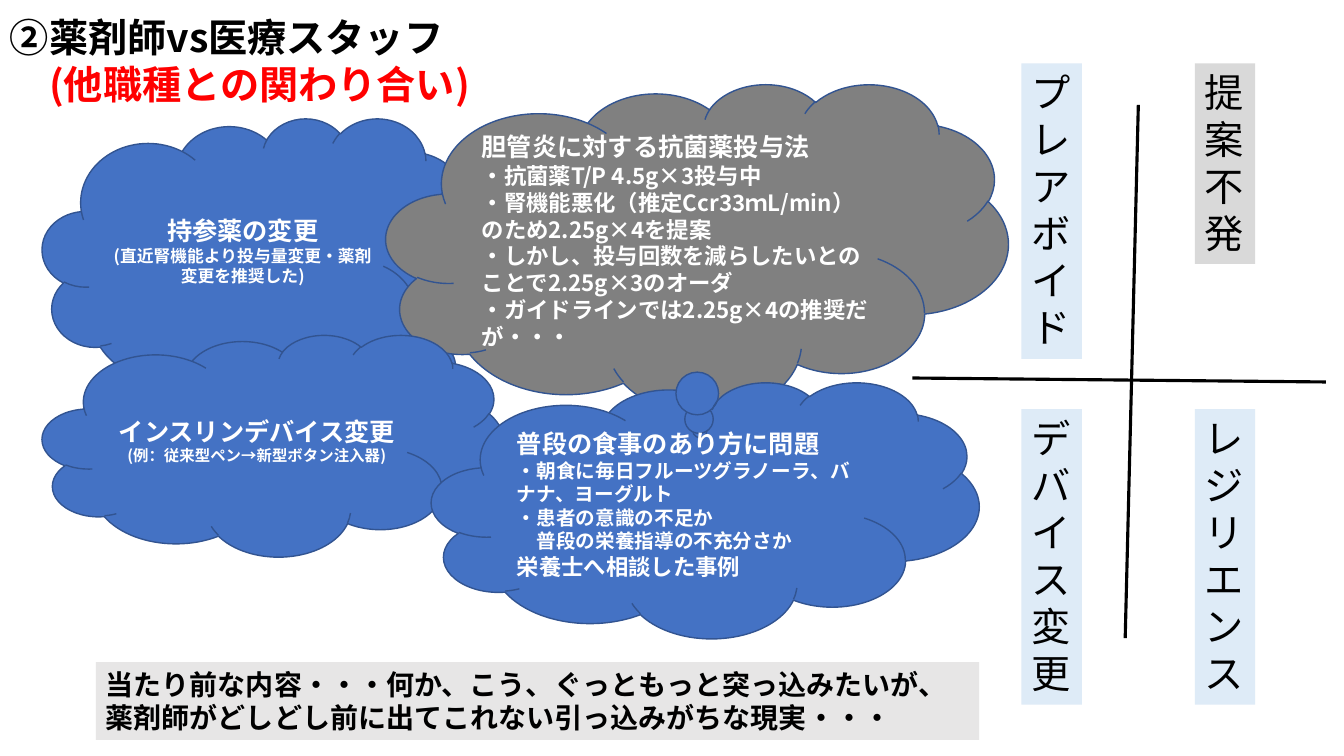
from dataclasses import dataclass

from lxml import etree
from pptx import Presentation
from pptx import util as u
from pptx.dml.color import RGBColor
from pptx.enum import shapes, text
from pptx.oxml import ns

WIDTH, HEIGHT = u.Inches(13.33), u.Inches(7.5)


@dataclass(frozen=True)
class Theme:
    """Colours, font and type sizes of the slide."""
    font: str = "Noto Sans CJK JP"
    black: str = "000000"
    white: str = "FFFFFF"
    red: str = "FF0000"
    blue: str = "4472C4"
    grey: str = "808080"
    outline: str = "325491"
    pale_blue: str = "DEEBF7"
    pale_grey: str = "D9D9D9"
    banner: str = "E7E6E6"
    title: int = 28
    summary: int = 20
    heading: int = 18
    large: int = 16
    medium: int = 14
    small: int = 12
    tiny: int = 11


THEME = Theme()


def across(share):
    """Turn a percentage of the slide width into a length."""
    return u.Emu(round(WIDTH * share / 100))


def down(share):
    """Turn a percentage of the slide height into a length."""
    return u.Emu(round(HEIGHT * share / 100))


def place(left, top, width, height):
    """Turn percentages of the slide into a position and size."""
    return across(left), down(top), across(width), down(height)


def apply(target, formats):
    """Set each format value on the target."""
    for name, value in formats.items():
        setattr(target, name, value)


def write(shape, lines, color, bold=True, align=text.PP_ALIGN.LEFT, **frame_formats):
    """Fill a shape with lines of (words, size, optional overrides)."""
    frame = shape.text_frame
    apply(frame, {"word_wrap": True, **frame_formats})
    for index, (words, size, *extra) in enumerate(lines):
        options = extra[0] if extra else {}
        paragraph = frame.paragraphs[0] if index == 0 else frame.add_paragraph()
        paragraph.alignment = align
        if options.get("indented"):
            properties = paragraph._p.get_or_add_pPr()
            apply_indent = {"marL": str(u.Pt(size)), "indent": "0"}
            properties.attrib.update(apply_indent)
        run = paragraph.add_run()
        run.text = words
        apply(run.font, {"size": u.Pt(size), "bold": bold, "name": THEME.font})
        run.font.color.rgb = RGBColor.from_string(options.get("color", color))
        east_asian = etree.SubElement(run.font._element, ns.qn("a:ea"))
        east_asian.set("typeface", THEME.font)


def add_filled(slide, kind, box, fill):
    """Add a flat preset shape without an outline."""
    shape = slide.shapes.add_shape(kind, *place(*box))
    shape.shadow.inherit = False
    shape.fill.solid()
    shape.fill.fore_color.rgb = RGBColor.from_string(fill)
    shape.line.fill.background()
    return shape


def add_cloud(slide, box, tail, fill, lines, align=text.PP_ALIGN.LEFT):
    """Add a cloud callout with its tail and words."""
    cloud = add_filled(slide, shapes.MSO_SHAPE.CLOUD_CALLOUT, box, fill)
    for index, offset in enumerate(tail):
        cloud.adjustments[index] = offset
    cloud.line.color.rgb = RGBColor.from_string(THEME.outline)
    cloud.line.width = u.Pt(1)
    write(cloud, lines, THEME.white, align=align,
          vertical_anchor=text.MSO_ANCHOR.MIDDLE)


def add_panel(slide, box, fill, words, size, bold):
    """Add a filled rectangle that grows with its text."""
    panel = add_filled(slide, shapes.MSO_SHAPE.RECTANGLE, box, fill)
    write(panel, [(words, size)], THEME.black, bold,
          vertical_anchor=text.MSO_ANCHOR.TOP,
          auto_size=text.MSO_AUTO_SIZE.SHAPE_TO_FIT_TEXT)


def add_label(slide, left, top, fill, words):
    """Add a one-character-wide label, as tall as its words."""
    box = (left, top, 4.5, 1.45 + 6.27 * len(words))
    add_panel(slide, box, fill, words, THEME.title, False)


def add_axis(slide, start, end):
    """Add a black line of the quadrant chart."""
    axis = slide.shapes.add_connector(
        shapes.MSO_CONNECTOR.STRAIGHT,
        across(start[0]), down(start[1]), across(end[0]), down(end[1]))
    axis.line.color.rgb = RGBColor.from_string(THEME.black)
    axis.line.width = u.Pt(2.25)
    etree.SubElement(axis._element.spPr, ns.qn("a:effectLst"))


def add_title(slide):
    """Add the two-line title."""
    title = slide.shapes.add_textbox(*place(0, 1.07, 75, 13.87))
    write(title, [
        ("②薬剤師vs医療スタッフ", THEME.title),
        ("(他職種との関わり合い)", THEME.title, {"color": THEME.red, "indented": True}),
    ], THEME.black, auto_size=text.MSO_AUTO_SIZE.SHAPE_TO_FIT_TEXT)


def add_clouds(slide):
    """Add the four case clouds from back to front."""
    center = text.PP_ALIGN.CENTER
    add_cloud(slide, (3.15, 15.6, 32.11, 36.93), (0.52, 0.5), THEME.blue, [
        ("持参薬の変更", THEME.heading),
        ("(直近腎機能より投与量変更・薬剤変更を推奨した)", THEME.small),
    ], center)
    add_cloud(slide, (28.73, 11.07, 46.29, 43.6), (0.16, 0.61), THEME.grey, [
        ("胆管炎に対する抗菌薬投与法", THEME.heading),
        ("・抗菌薬T/P 4.5g×3投与中", THEME.large),
        ("・腎機能悪化（推定Ccr33ｍL/min）のため2.25g×4を提案", THEME.large),
        ("・しかし、投与回数を減らしたいとのことで2.25g×3のオーダ", THEME.large),
        ("・ガイドラインでは2.25g×4の推奨だが・・・", THEME.large),
    ])
    add_cloud(slide, (3.15, 44.27, 34.36, 29.33), (0.57, 0.15), THEME.blue, [
        ("インスリンデバイス変更", THEME.heading),
        ("(例：従来型ペン→新型ボタン注入器)", THEME.tiny),
    ], center)
    add_cloud(slide, (32.11, 50.53, 40.74, 33.87), (-0.01, -0.31), THEME.blue, [
        ("普段の食事のあり方に問題", THEME.heading),
        ("・朝食に毎日フルーツグラノーラ、バナナ、ヨーグルト", THEME.medium),
        ("・患者の意識の不足か", THEME.medium),
        ("普段の栄養指導の不充分さか", THEME.medium, {"indented": True}),
        ("栄養士へ相談した事例", THEME.large),
    ])


def add_quadrants(slide):
    """Add the crossing axes and the four quadrant labels."""
    add_axis(slide, (67.89, 50), (98.65, 50.53))
    add_axis(slide, (84.7, 13.87), (83.72, 84.4))
    left, right, upper, lower = 76, 88.9, 8.4, 54.13
    add_label(slide, left, upper, THEME.pale_blue, "プレアボイド")
    add_label(slide, left, lower, THEME.pale_blue, "デバイス変更")
    add_label(slide, right, lower, THEME.pale_blue, "レジリエンス")
    add_label(slide, right, upper, THEME.pale_grey, "提案不発")


def main():
    """Build and save the slide."""
    presentation = Presentation()
    apply(presentation, {"slide_width": WIDTH, "slide_height": HEIGHT})
    slide = presentation.slides.add_slide(presentation.slide_layouts[6])
    add_title(slide)
    add_clouds(slide)
    add_panel(slide, (7.13, 87.6, 65.72, 10.27), THEME.banner,
              "当たり前な内容・・・何か、こう、ぐっともっと突っ込みたいが、"
              "薬剤師がどしどし前に出てこれない引っ込みがちな現実・・・",
              THEME.summary, True)
    add_quadrants(slide)
    presentation.save("out.pptx")


if __name__ == "__main__":
    main()
